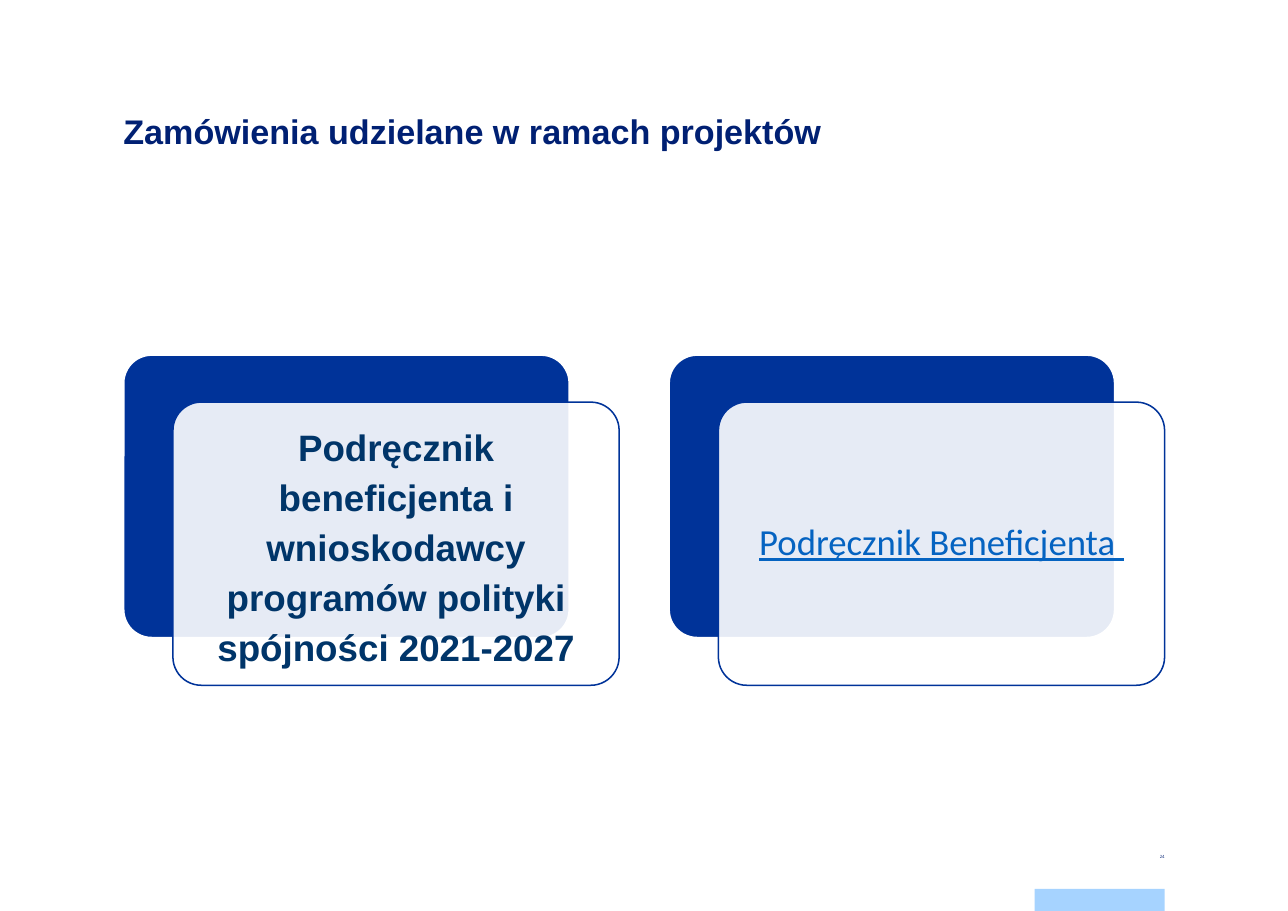
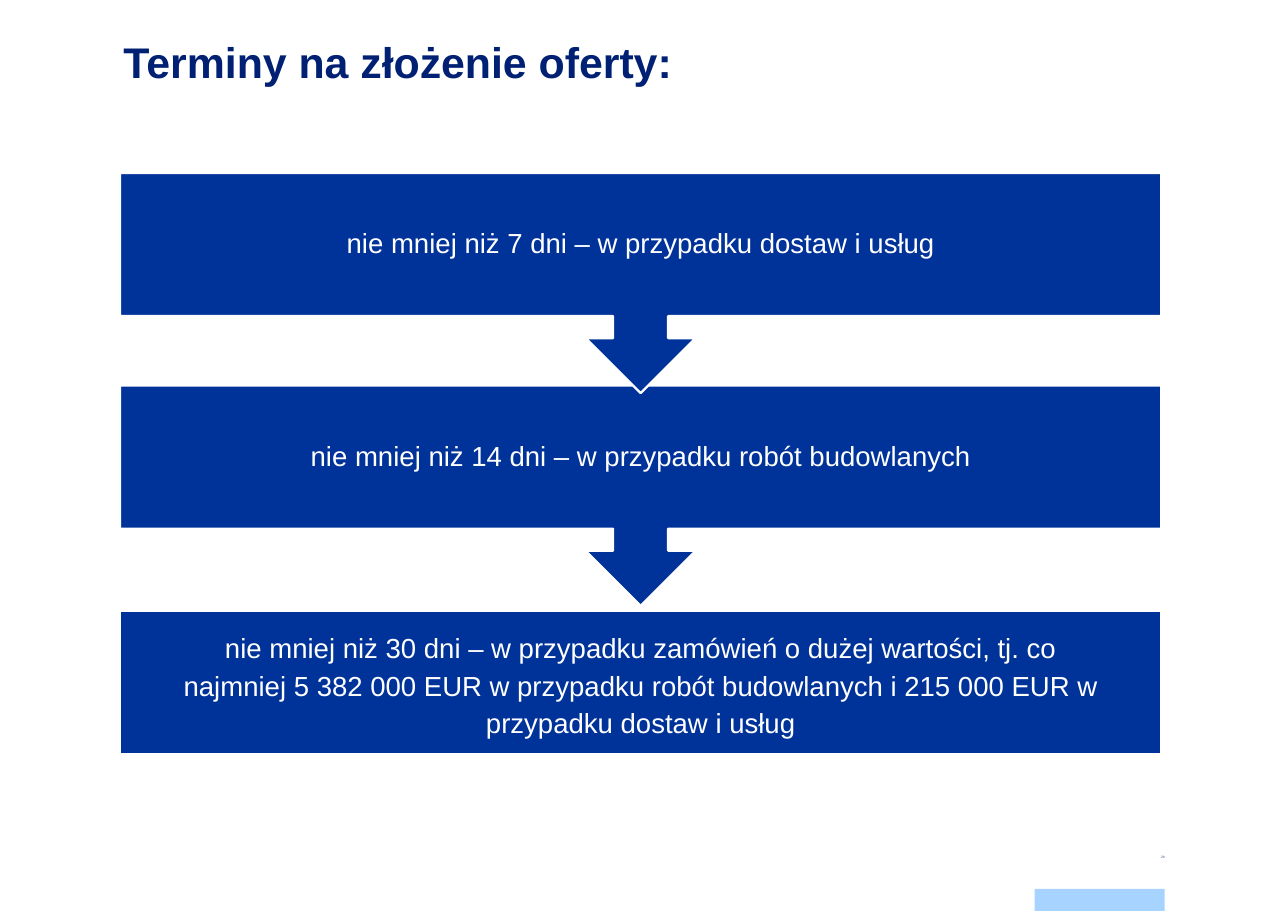
from dataclasses import dataclass, field
from typing import Any

from lxml import etree
from pptx import Presentation, util as u
from pptx.dml import color
from pptx.enum import shapes, text
from pptx.oxml import ns

WIDTH, HEIGHT = 11.69, 8.27
COLUMN, ROW = WIDTH / 100, HEIGHT / 100
MARGIN, CONTENT_WIDTH = 9.58, 80.84
FOOTER_WIDTH, FOOTER_HEIGHT = 10.09, 2.42
FOOTER_LEFT = MARGIN + CONTENT_WIDTH - FOOTER_WIDTH

NAVY, BLUE, SKY, WHITE = "002073", "003399", "A6D3FF", "FFFFFF"
CENTER, RIGHT = text.PP_ALIGN.CENTER, text.PP_ALIGN.RIGHT
MIDDLE, TOP = text.MSO_ANCHOR.MIDDLE, text.MSO_ANCHOR.TOP
RECTANGLE = shapes.MSO_SHAPE.RECTANGLE
ROUNDED = shapes.MSO_SHAPE.ROUNDED_RECTANGLE
CALLOUT = shapes.MSO_SHAPE.DOWN_ARROW_CALLOUT


@dataclass(frozen=True)
class Box:
    column: float
    row: float
    columns: float
    rows: float

    def lengths(self) -> tuple[u.Length, ...]:
        return (u.Inches(self.column * COLUMN), u.Inches(self.row * ROW),
                u.Inches(self.columns * COLUMN), u.Inches(self.rows * ROW))


@dataclass(frozen=True)
class Style:
    size: float
    hue: str
    font: str = "Arial"
    format: dict[str, Any] = field(default_factory=dict)
    paragraph: dict[str, Any] = field(default_factory=dict)
    inset: tuple[float, float] = (0, 0)
    anchor: Any = MIDDLE


@dataclass(frozen=True)
class Card:
    wording: str
    style: Style


@dataclass(frozen=True)
class Step:
    row: float
    rows: float
    kind: Any
    lines: tuple[str, ...]
    spacing: float


def rgb(value: str) -> color.RGBColor:
    return color.RGBColor.from_string(value)


def apply(target: Any, values: dict[str, Any]) -> None:
    for name, value in values.items():
        setattr(target, name, value)


def write(shape: Any, lines: tuple[str, ...], style: Style) -> None:
    frame = shape.text_frame
    side, end = (u.Inches(length) for length in style.inset)
    apply(frame, {"word_wrap": True, "vertical_anchor": style.anchor,
                  "margin_left": side, "margin_right": side,
                  "margin_top": end, "margin_bottom": end})
    for index, line in enumerate(lines):
        paragraph = frame.paragraphs[0] if index == 0 else frame.add_paragraph()
        apply(paragraph, style.paragraph)
        run = paragraph.add_run()
        run.text = line
        apply(run.font, {"name": style.font, "size": u.Pt(style.size), **style.format})
        run.font.color.rgb = rgb(style.hue)


def add_label(slide: Any, box: Box, wording: str, style: Style) -> None:
    write(slide.shapes.add_textbox(*box.lengths()), (wording,), style)


def add_panel(slide: Any, kind: Any, box: Box, fill: str, line: str | None = WHITE,
              line_width: float = 1.5, opacity: int = 100) -> Any:
    shape = slide.shapes.add_shape(kind, *box.lengths())
    shape.shadow.inherit = False
    shape.fill.solid()
    shape.fill.fore_color.rgb = rgb(fill)
    if line:
        shape.line.color.rgb = rgb(line)
        shape.line.width = u.Pt(line_width)
    else:
        shape.line.fill.background()
    if opacity < 100:
        tint = shape.fill._xPr.find(ns.qn("a:solidFill"))[0]
        etree.SubElement(tint, ns.qn("a:alpha")).set("val", str(opacity * 1000))
    if kind == ROUNDED:
        shape.adjustments[0] = 0.1
    return shape


def add_base(presentation: Any, title: str, title_row: float, title_size: float,
             number: str, number_size: float, number_spacing: float) -> Any:
    slide = presentation.slides.add_slide(presentation.slide_layouts[6])
    add_panel(slide, RECTANGLE,
              Box(FOOTER_LEFT, 100 - FOOTER_HEIGHT, FOOTER_WIDTH, FOOTER_HEIGHT), SKY, None)
    add_label(slide, Box(MARGIN, title_row, CONTENT_WIDTH, 14.27), title,
              Style(title_size, NAVY, format={"bold": True},
                    paragraph={"line_spacing": u.Pt(28.6)}, anchor=TOP))
    add_label(slide, Box(FOOTER_LEFT, 92.87, FOOTER_WIDTH, FOOTER_HEIGHT), number,
              Style(number_size, NAVY, "Open Sans", inset=(0, 0.08),
                    paragraph={"alignment": RIGHT, "line_spacing": number_spacing}))
    return slide


def add_cards(slide: Any, cards: tuple[Card, ...]) -> None:
    width, height, row = 34.64, 31.08, 38.94
    shift_column, shift_row = 3.85, 5.2
    pitch = (CONTENT_WIDTH - width - shift_column) / (len(cards) - 1)
    for index, card in enumerate(cards):
        column = MARGIN + index * pitch
        add_panel(slide, ROUNDED, Box(column, row, width, height), BLUE)
        front = Box(column + shift_column, row + shift_row, width, height)
        panel = add_panel(slide, ROUNDED, front, WHITE, BLUE, 1, 90)
        write(panel, (card.wording,), card.style)


def add_steps(slide: Any, steps: tuple[Step, ...]) -> None:
    for step in reversed(steps):
        panel = add_panel(slide, step.kind, Box(9.32, step.row, CONTENT_WIDTH, step.rows), BLUE)
        write(panel, step.lines,
              Style(18, WHITE, inset=(0.14, 0.14),
                    paragraph={"alignment": CENTER, "line_spacing": step.spacing}))


def main() -> None:
    presentation = Presentation()
    apply(presentation, {"slide_width": u.Inches(WIDTH), "slide_height": u.Inches(HEIGHT)})

    slide = add_base(presentation, "Zamówienia udzielane w ramach projektów",
                     11.85, 22.3, "24", 2.8, 0.7)
    add_cards(slide, (
        Card("Podręcznik beneficjenta i wnioskodawcy programów polityki spójności 2021-2027",
             Style(24, "003569", format={"bold": True}, inset=(0.1, 0.1),
                   paragraph={"alignment": CENTER, "line_spacing": 1.14})),
        Card("Podręcznik Beneficjenta ",
             Style(24, "0563C1", "Calibri", {"underline": True}, inset=(0.1, 0.1),
                   paragraph={"alignment": CENTER, "line_spacing": 0.9})),
    ))

    slide = add_base(presentation, "Terminy na złożenie oferty:", 4.72, 28, "29", 2, 0.9)
    add_steps(slide, (
        Step(18.98, 24.18, CALLOUT,
             ("nie mniej niż 7 dni – w przypadku dostaw i usług",), 0.9),
        Step(42.32, 24.18, CALLOUT,
             ("nie mniej niż 14 dni – w przypadku robót budowlanych",), 0.9),
        Step(67.11, 15.72, RECTANGLE,
             ("nie mniej niż 30 dni – w przypadku zamówień o dużej wartości, tj. co",
              "najmniej 5 382 000 EUR w przypadku robót budowlanych i 215 000 EUR w "
              "przypadku dostaw i usług"), 1.14),
    ))
    presentation.save("out.pptx")


if __name__ == "__main__":
    main()
